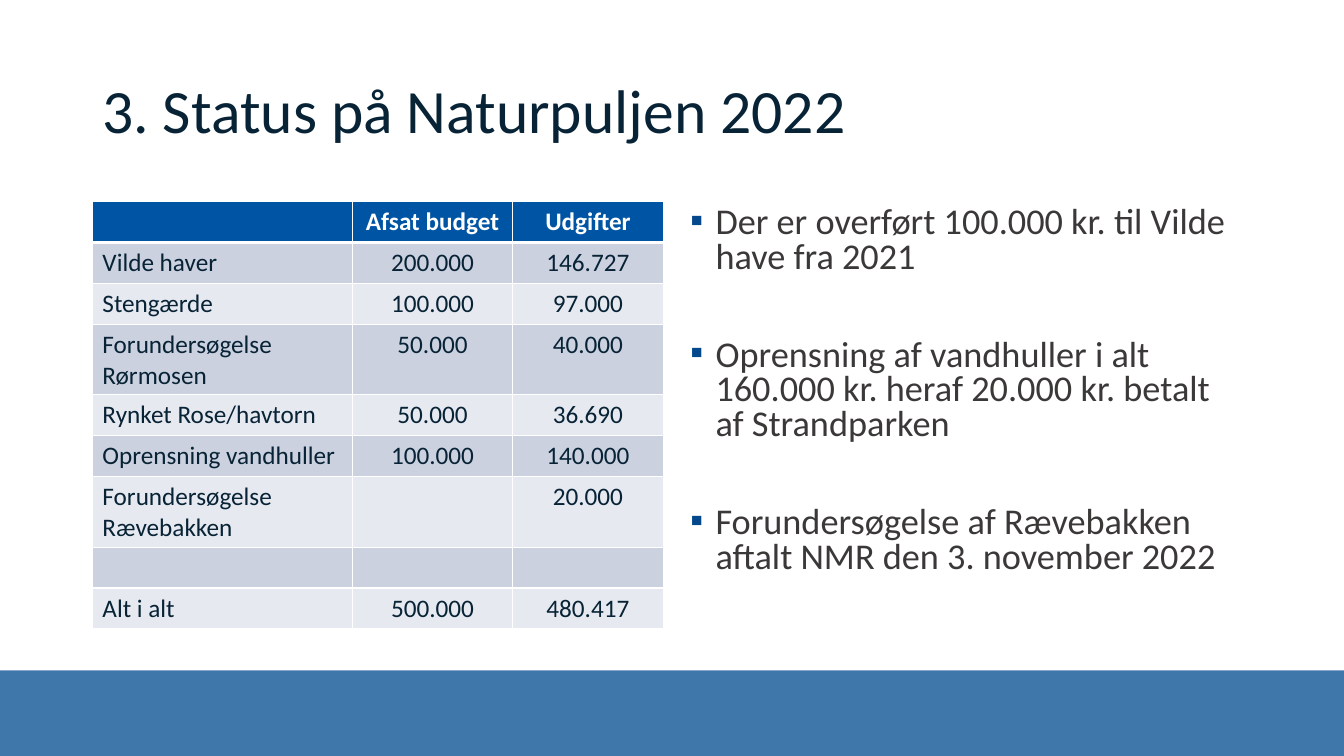
from dataclasses import dataclass

from pptx import Presentation
from pptx.dml.color import RGBColor
from pptx.enum.shapes import MSO_SHAPE
from pptx.enum.text import MSO_ANCHOR, PP_ALIGN
from pptx.oxml.xmlchemy import OxmlElement
from pptx.util import Inches, Pt

COLS, ROWS = 160, 90  # grid of the 13.33 x 7.5 inch slide

BUDGET = [
    ("", "Afsat budget", "Udgifter"),
    ("Vilde haver", "200.000", "146.727"),
    ("Stengærde", "100.000", "97.000"),
    ("Forundersøgelse Rørmosen", "50.000", "40.000"),
    ("Rynket Rose/havtorn", "50.000", "36.690"),
    ("Oprensning vandhuller", "100.000", "140.000"),
    ("Forundersøgelse Rævebakken", "", "20.000"),
    ("", "", ""),
    ("Alt i alt", "500.000", "480.417"),
]
NOTES = [
    "Der er overført 100.000 kr. til Vilde have fra 2021",
    "Oprensning af vandhuller i alt 160.000 kr. heraf 20.000 kr. betalt af Strandparken",
    "Forundersøgelse af Rævebakken aftalt NMR den 3. november 2022",
]


@dataclass(frozen=True)
class Theme:
    font: str = "Calibri"
    title_size: float = 44
    body_size: float = 25.9
    table_size: float = 18
    ink: str = "072335"
    body: str = "3B3838"
    bullet: str = "04488C"
    band: str = "004A8E"
    header: str = "0054A4"
    stripes: tuple = ("E7E9F0", "CCD1E0")
    white: str = "FFFFFF"


def child(parent, tag, **attrs):
    el = OxmlElement(tag)
    for name, value in attrs.items():
        el.set(name, str(value))
    parent.append(el)
    return el


def write(p, text, font, size, color, bold=False, align=None, line=None, before=None):
    """Fill a paragraph with one formatted run; empty text adds no run."""
    p.alignment, p.line_spacing = align, line
    if before is not None:
        p.space_before = Pt(before)
    if text:
        r = p.add_run()
        r.text = text
        r.font.name, r.font.size, r.font.bold = font, Pt(size), bold
        r.font.color.rgb = RGBColor.from_string(color)


class Deck:
    def __init__(self, theme):
        self.theme = theme
        self.prs = Presentation()
        self.prs.slide_width, self.prs.slide_height = Inches(13.33), Inches(7.5)
        self.s = self.prs.slides.add_slide(self.prs.slide_layouts[6])

    def x(self, cols):
        return round(self.prs.slide_width * cols / COLS)

    def y(self, rows):
        return round(self.prs.slide_height * rows / ROWS)

    def box(self, col, row, width, height):
        return self.x(col), self.y(row), self.x(width), self.y(height)

    def band(self, *place, opacity):
        sp = self.s.shapes.add_shape(MSO_SHAPE.RECTANGLE, *self.box(*place))
        sp.shadow.inherit = False
        sp.line.fill.background()
        sp.fill.solid()
        sp.fill.fore_color.rgb = RGBColor.from_string(self.theme.band)
        color = sp.fill._xPr.solidFill[0]
        child(color, "a:alpha", val=opacity * 1000)

    def frame(self, *place, anchor=MSO_ANCHOR.TOP):
        tf = self.s.shapes.add_textbox(*self.box(*place)).text_frame
        tf.word_wrap, tf.vertical_anchor = True, anchor
        return tf

    def title(self, text, *place):
        t = self.theme
        tf = self.frame(*place, anchor=MSO_ANCHOR.MIDDLE)
        write(tf.paragraphs[0], text, t.font, t.title_size, t.ink, line=0.9)

    def bullets(self, items, *place, gap):
        t = self.theme
        tf = self.frame(*place)
        for i, item in enumerate(items):
            p = tf.add_paragraph() if i else tf.paragraphs[0]
            write(p, item, t.font, t.body_size, t.body, line=0.8,
                  before=gap if i else None)
            pPr = p._p.get_or_add_pPr()
            pPr.set("marL", str(Inches(0.25)))
            pPr.set("indent", str(-Inches(0.25)))
            child(child(pPr, "a:buClr"), "a:srgbClr", val=t.bullet)
            child(pPr, "a:buFont", typeface=t.font)
            child(pPr, "a:buChar", char="▪")

    def table(self, data, col, row, widths, row_height):
        t = self.theme
        place = self.box(col, row, sum(widths), row_height * len(data))
        table = self.s.shapes.add_table(len(data), len(widths), *place).table
        for column, width in zip(table.columns, widths):
            column.width = self.x(width)
        for i, values in enumerate(data):
            table.rows[i].height = self.y(row_height)
            for j, value in enumerate(values):
                self.cell(table.cell(i, j), value, header=i == 0,
                          fill=t.stripes[i % 2] if i else t.header,
                          align=PP_ALIGN.CENTER if j else PP_ALIGN.LEFT)

    def cell(self, cell, text, header, fill, align):
        t = self.theme
        write(cell.text_frame.paragraphs[0], text, t.font, t.table_size,
              t.white if header else t.ink, bold=header, align=align)
        tcPr = cell._tc.get_or_add_tcPr()
        for side in "LRTB":
            width = 3 if header and side == "B" else 1
            ln = child(tcPr, f"a:ln{side}", w=Pt(width))
            child(child(ln, "a:solidFill"), "a:srgbClr", val=t.white)
        cell.fill.solid()
        cell.fill.fore_color.rgb = RGBColor.from_string(fill)


def main():
    deck = Deck(Theme())
    deck.band(0, 79.8, COLS, 10.2, opacity=75)
    deck.title("3. Status på Naturpuljen 2022", 11, 4.8, 138, 17.4)
    deck.table(BUDGET, 11, 24, widths=(31, 19, 18), row_height=4.87)
    deck.bullets(NOTES, 81, 24, 68, 50, gap=45)
    deck.prs.save("out.pptx")


if __name__ == "__main__":
    main()
